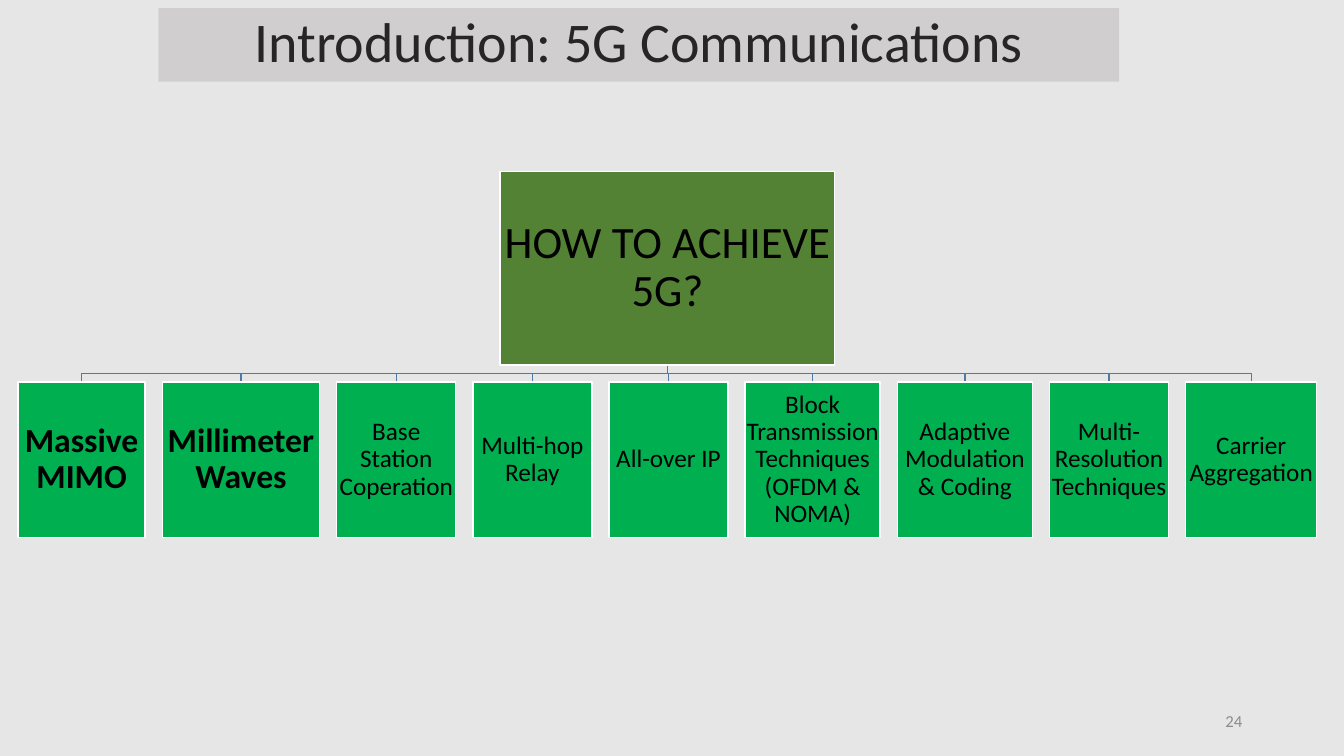
from dataclasses import dataclass
from pptx import Presentation
from pptx.dml.color import RGBColor
from pptx.enum.shapes import MSO_SHAPE
from pptx.enum.text import MSO_ANCHOR, MSO_AUTO_SIZE, PP_ALIGN
from pptx.util import Inches, Pt

RECT = MSO_SHAPE.RECTANGLE
MIDDLE = MSO_ANCHOR.MIDDLE
NO_FIT = MSO_AUTO_SIZE.NONE
CENTER, RIGHT = PP_ALIGN.CENTER, PP_ALIGN.RIGHT

TITLE = "Introduction: 5G Communications"
ROOT = "HOW TO ACHIEVE 5G?"
NUMBER = "24"
LEAVES = [
    ("Massive MIMO", 1.26, True),
    ("Millimeter Waves", 1.56, True),
    ("Base Station Coperation", 1.18, False),
    ("Multi-hop Relay", 1.18, False),
    ("All-over IP", 1.18, False),
    ("Block Transmission Techniques (OFDM & NOMA)", 1.34, False),
    ("Adaptive Modulation & Coding", 1.34, False),
    ("Multi-Resolution Techniques", 1.18, False),
    ("Carrier Aggregation", 1.3, False),
]
ROOT_BOX = (4.96, 1.7, 3.32, 1.92)
LEFT, TOP, TALL, GAP = 0.18, 3.79, 1.54, 0.17


@dataclass(frozen=True)
class Theme:
    font: str = "Calibri"
    page: str = "E7E6E6"
    band: str = "D0CECE"
    head: str = "262626"
    text: str = "000000"
    mute: str = "8C8C8C"
    root: str = "548235"
    leaf: str = "00B050"
    edge: str = "FFFFFF"
    link: str = "497CAB"
    title_pt: int = 40
    root_pt: int = 32
    key_pt: int = 24
    leaf_pt: int = 18
    note_pt: int = 12


theme = Theme()


def paint(fill, color):
    fill.solid()
    fill.fore_color.rgb = RGBColor.from_string(color)


def write(shape, text, size, color=theme.text, bold=False, align=CENTER,
          inset=None, spacing=0.9):
    frame = shape.text_frame
    frame.word_wrap = True
    frame.auto_size = NO_FIT
    frame.vertical_anchor = MIDDLE
    if inset is not None:
        frame.margin_left = frame.margin_right = Inches(inset)
        frame.margin_top = frame.margin_bottom = Inches(inset)
    para = frame.paragraphs[0]
    para.alignment = align
    para.line_spacing = spacing
    run = para.add_run()
    run.text = text
    run.font.name = theme.font
    run.font.size = Pt(size)
    run.font.bold = bold
    run.font.color.rgb = RGBColor.from_string(color)


def add_box(slide, box, color, text, size, **style):
    shape = slide.shapes.add_shape(RECT, *map(Inches, box))
    shape.shadow.inherit = False
    paint(shape.fill, color)
    paint(shape.line.fill, theme.edge)
    shape.line.width = Pt(1)
    write(shape, text, size, **style)


def add_link(slide, start, end):
    bend = (start[1] + end[1]) / 2
    route = [(start[0], bend), (end[0], bend), end]
    form = slide.shapes.build_freeform(*map(Inches, start))
    form.add_line_segments([(Inches(x), Inches(y)) for x, y in route], close=False)
    link = form.convert_to_shape()
    link.shadow.inherit = False
    link.fill.background()
    paint(link.line.fill, theme.link)
    link.line.width = Pt(1)


def add_title(slide):
    title = slide.shapes.title
    title.left, title.top = Inches(1.57), Inches(0.08)
    title.width, title.height = Inches(9.53), Inches(0.73)
    paint(title.fill, theme.band)
    write(title, TITLE, theme.title_pt, color=theme.head)


def add_tree(slide):
    left, top, width, height = ROOT_BOX
    start = (left + width / 2, top + height)
    boxes = []
    x = LEFT
    for text, wide, key in LEAVES:
        boxes.append(((x, TOP, wide, TALL), text, key))
        x += wide + GAP
    for box, _, _ in reversed(boxes):
        add_link(slide, start, (box[0] + box[2] / 2, TOP))
    add_box(slide, ROOT_BOX, theme.root, ROOT, theme.root_pt, inset=0.02)
    for box, text, key in boxes:
        size = theme.key_pt if key else theme.leaf_pt
        add_box(slide, box, theme.leaf, text, size, bold=key,
                inset=0.02 if key else 0.01)


def main():
    deck = Presentation()
    deck.slide_width, deck.slide_height = Inches(13.33), Inches(7.5)
    slide = deck.slides.add_slide(deck.slide_layouts[5])
    paint(slide.background.fill, theme.page)
    add_title(slide)
    add_tree(slide)
    note = slide.shapes.add_textbox(*map(Inches, (9.42, 6.95, 3, 0.4)))
    write(note, NUMBER, theme.note_pt, color=theme.mute, align=RIGHT, spacing=1.0)
    deck.save("out.pptx")


if __name__ == "__main__":
    main()
